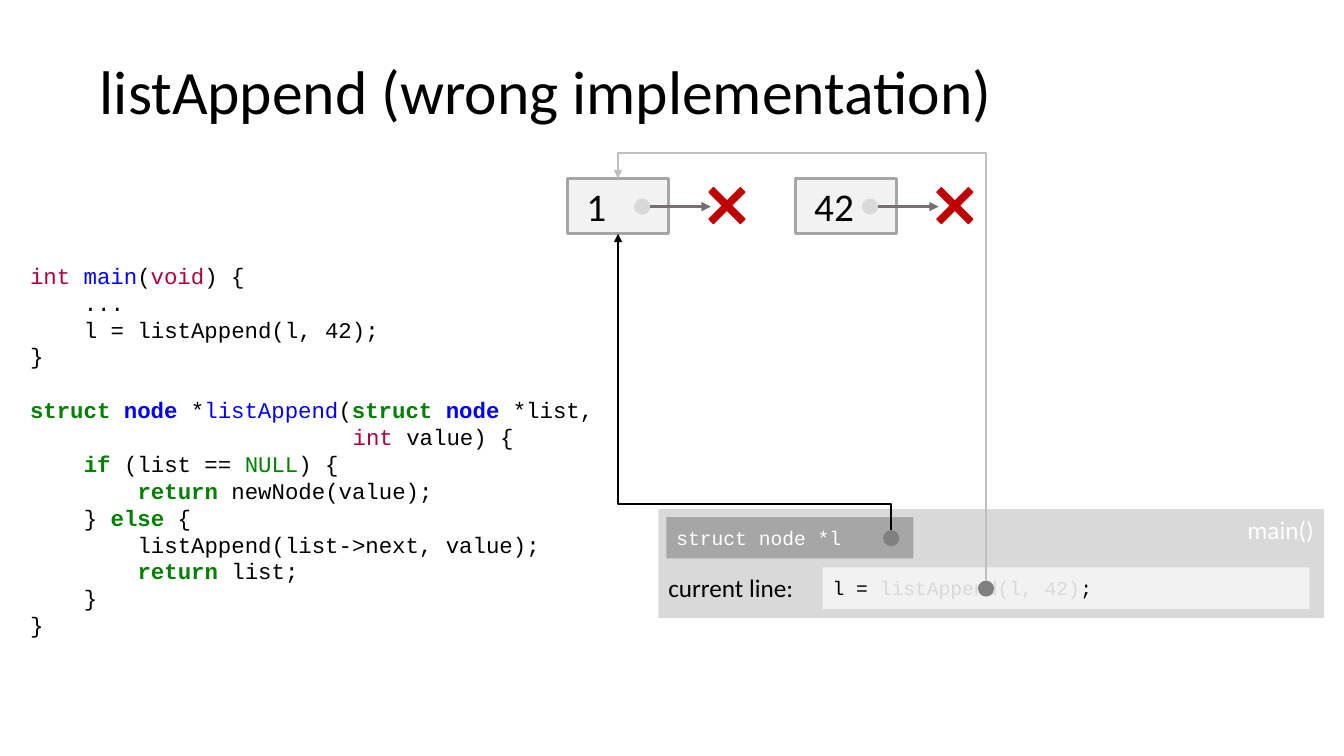
from dataclasses import dataclass

from lxml import etree
from pptx import Presentation
from pptx.dml.color import RGBColor
from pptx.enum.shapes import MSO_CONNECTOR as Link, MSO_SHAPE as Preset
from pptx.enum.text import MSO_ANCHOR as Anchor, MSO_AUTO_SIZE as AutoSize, PP_ALIGN as Align
from pptx.oxml.ns import qn
from pptx.util import Emu, Pt

# Content: code lines are (indent in characters, runs of (text, style))
TITLE = "listAppend (wrong implementation)"
CODE = [
    [
        (0, [("int ", "type"), ("main", "name"), ("(", "plain"), ("void", "type"), (") {", "plain")]),
        (4, [("...", "plain")]),
        (4, [("l = listAppend(l, 42);", "plain")]),
        (0, [("}", "plain")]),
    ],
    [
        (0, [("struct ", "keyword"), ("node", "struct"), (" *", "plain"), ("listAppend", "name"),
             ("(", "plain"), ("struct ", "keyword"), ("node", "struct"), (" *list,", "plain")]),
        (24, [("int", "type"), (" value) {", "plain")]),
        (4, [("if", "keyword"), (" (list == ", "plain"), ("NULL", "constant"), (") {", "plain")]),
        (8, [("return ", "keyword"), ("newNode(value);", "plain")]),
        (4, [("} ", "plain"), ("else", "keyword"), (" {", "plain")]),
        (8, [("listAppend(list->next, value);", "plain")]),
        (8, [("return", "keyword"), (" list;", "plain")]),
        (4, [("}", "plain")]),
        (0, [("}", "plain")]),
    ],
]
NODES = [(" 1", 563), (" 42", 789)]  # value, left edge
FRAME_NAME = "main()"
VARIABLE = "struct node *l"
LINE_LABEL = "current line:"
CURRENT_LINE = [("l = ", "plain"), ("listAppend(l, 42)", "faded"), (";", "plain")]


@dataclass(frozen=True)
class Theme:
    sans: str = "Calibri"
    mono: str = "Courier New"
    title: int = 44
    value: int = 28
    label: int = 18
    code: int = 16
    small_code: int = 14
    code_pitch: float = 19.2
    black: str = "000000"
    white: str = "FFFFFF"
    pale: str = "F2F2F2"
    light: str = "D9D9D9"
    mid: str = "A6A6A6"
    dark: str = "808080"
    pointer: str = "767171"
    result: str = "BFBFBF"
    red: str = "C00000"


THEME = Theme()
STYLES = {  # colour, bold
    "plain": (THEME.black, False),
    "type": ("B00040", False),
    "name": ("0000FF", False),
    "struct": ("0000FF", True),
    "keyword": ("008000", True),
    "constant": ("008000", False),
    "faded": (THEME.light, False),
    "inverse": (THEME.white, False),
}

# Layout in px, 100 to the inch
PX = 9144
NODE_TOP, NODE_W, NODE_H = 177, 100, 55
DOT, CROSS = 16, 44
FRAME_LEFT, FRAME_TOP, FRAME_W, FRAME_H = 653, 505, 660, 108
ROW_H = 41


def px(*lengths):
    return [Emu(round(length * PX)) for length in lengths]


def write(paragraph, runs, size, font):
    for text, style in runs:
        run = paragraph.add_run()
        run.text = text
        colour, bold = STYLES[style]
        run.font.size, run.font.name, run.font.bold = Pt(size), font, bold
        run.font.color.rgb = RGBColor.from_string(colour)


def add_box(shapes, preset, box, fill, line=None, width=1):
    shape = shapes.add_shape(preset, *px(*box))
    shape.shadow.inherit = False
    shape.fill.solid()
    shape.fill.fore_color.rgb = RGBColor.from_string(fill)
    if line:
        shape.line.color.rgb = RGBColor.from_string(line)
        shape.line.width = Pt(width)
    else:
        shape.line.fill.background()
    return shape


def fill_text(shape, runs, size, font, align=Align.LEFT, anchor=Anchor.MIDDLE):
    frame = shape.text_frame
    frame.word_wrap, frame.vertical_anchor = True, anchor
    frame.paragraphs[0].alignment = align
    write(frame.paragraphs[0], runs, size, font)


def add_dot(shapes, left, top, colour):
    add_box(shapes, Preset.OVAL, (left, top, DOT, DOT), colour)


def add_arrow(shapes, kind, start, end, colour, width):
    arrow = shapes.add_connector(kind, *px(*start, *end))
    arrow.line.color.rgb = RGBColor.from_string(colour)
    arrow.line.width = Pt(width)
    etree.SubElement(arrow.line._get_or_add_ln(), qn("a:tailEnd"), type="triangle")
    etree.SubElement(arrow._element.spPr, qn("a:effectLst"))
    return arrow


def add_elbow(shapes, start, end, bend_y, colour):
    """Arrow that runs up to bend_y, across to the left, then to its end."""
    arrow = add_arrow(shapes, Link.ELBOW, start, end, colour, 1.5)
    across, rise = start[0] - end[0], start[1] - end[1]
    # A quarter turn swaps width and height about the same centre
    arrow.left, arrow.top, arrow.width, arrow.height = px(
        (start[0] + end[0] - rise) / 2, (start[1] + end[1] - across) / 2, rise, across)
    xfrm = arrow._element.spPr.find(qn("a:xfrm"))
    xfrm.attrib.pop("flipH", None)
    xfrm.set("flipV", "1")
    xfrm.set("rot", str(270 * 60000))
    guides = arrow._element.spPr.find(qn("a:prstGeom")).get_or_add_avLst()
    bend = round((start[1] - bend_y) / rise * 100000)
    etree.SubElement(guides, qn("a:gd"), name="adj1", fmla=f"val {bend}")


def add_node(shapes, value, left):
    group = shapes.add_group_shape().shapes
    box = add_box(group, Preset.RECTANGLE, (left, NODE_TOP, NODE_W, NODE_H), THEME.pale, THEME.mid, 2.25)
    fill_text(box, [(value, "plain")], THEME.value, THEME.sans)
    add_dot(group, left + 66, NODE_TOP + 20, THEME.light)
    null = add_box(group, Preset.CROSS, (left + 136, NODE_TOP + 5, CROSS, CROSS), THEME.red, THEME.red)
    null.adjustments[0] = 0.43
    null.rotation = 45
    add_arrow(group, Link.STRAIGHT, (left + 82, NODE_TOP + 28), (left + 142, NODE_TOP + 28),
              THEME.pointer, 2.25)


def add_title(slide):
    title = slide.shapes.title
    title.left, title.top, title.width, title.height = px(89, 21, 1046, 145)
    fill_text(title, [(TITLE, "plain")], THEME.title, THEME.sans)
    title.text_frame.auto_size = AutoSize.NONE
    title.text_frame.paragraphs[0].line_spacing = 0.9


def add_code(shapes):
    frame = shapes.add_textbox(*px(20, 255, 634, 387)).text_frame
    frame.word_wrap = True
    paragraph = frame.paragraphs[0]
    for part, lines in enumerate(CODE):
        for row, (indent, runs) in enumerate(lines):
            if part or row:
                paragraph = frame.add_paragraph()
            paragraph.line_spacing = Pt(THEME.code_pitch)
            if part and not row:
                paragraph.space_before = Pt(THEME.code_pitch)
            # A monospaced character is 0.6 of the type size wide
            paragraph._p.get_or_add_pPr().set("marL", str(Pt(indent * THEME.code * 0.6)))
            write(paragraph, runs, THEME.code, THEME.mono)


def add_frame(shapes):
    group = shapes.add_group_shape().shapes
    frame = add_box(group, Preset.RECTANGLE, (FRAME_LEFT, FRAME_TOP, FRAME_W, FRAME_H), THEME.light)
    fill_text(frame, [(FRAME_NAME, "inverse")], THEME.label, THEME.sans, Align.RIGHT, Anchor.TOP)
    label = group.add_textbox(*px(FRAME_LEFT, FRAME_TOP + 58, 163, ROW_H))
    fill_text(label, [(LINE_LABEL, "plain")], THEME.label, THEME.sans, anchor=Anchor.TOP)
    current = add_box(group, Preset.RECTANGLE, (FRAME_LEFT + 163, FRAME_TOP + 58, 483, ROW_H), THEME.pale)
    fill_text(current, CURRENT_LINE, THEME.small_code, THEME.mono)
    variable = add_box(group, Preset.RECTANGLE, (FRAME_LEFT + 8, FRAME_TOP + 8, 245, ROW_H), THEME.mid)
    fill_text(variable, [(VARIABLE, "inverse")], THEME.small_code, THEME.mono)
    add_dot(group, 876, 526, THEME.dark)


def main():
    deck = Presentation()
    deck.slide_width, deck.slide_height = px(1333, 750)
    slide = deck.slides.add_slide(deck.slide_layouts[5])
    shapes = slide.shapes
    first, second = NODES
    first_middle = first[1] + NODE_W // 2

    add_title(slide)
    add_code(shapes)
    add_node(shapes, *first)
    add_frame(shapes)
    # Variable l points at the first node
    add_elbow(shapes, (884, 526), (first_middle, NODE_TOP + NODE_H), 500, THEME.black)
    add_node(shapes, *second)
    # The call's result points at the first node too
    add_dot(shapes, 970, 576, THEME.dark)
    add_elbow(shapes, (978, 576), (first_middle, NODE_TOP), 152, THEME.result)
    deck.save("out.pptx")


if __name__ == "__main__":
    main()
